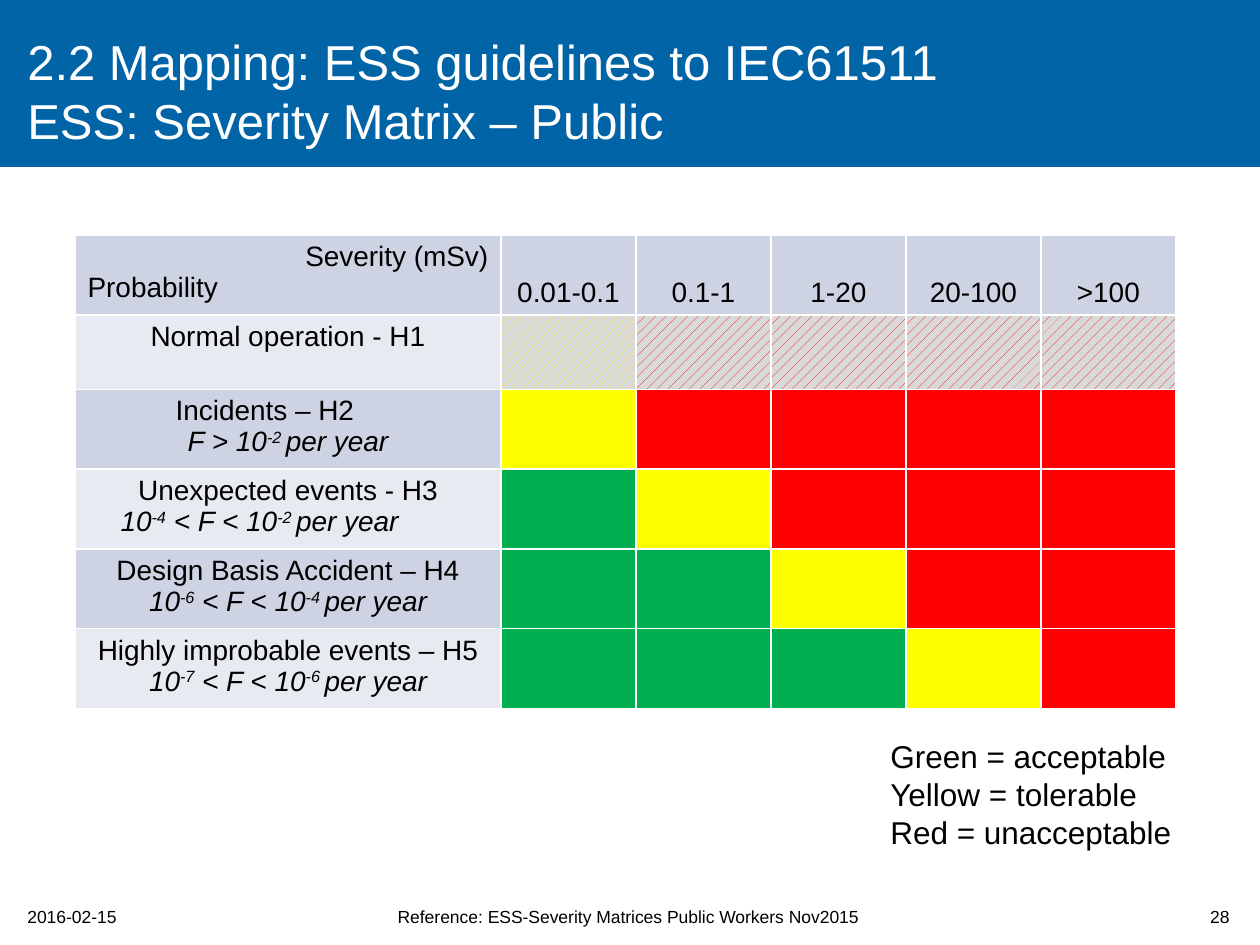
from lxml import etree
from pptx import Presentation
from pptx.dml.color import RGBColor as RGB
from pptx.enum.dml import MSO_PATTERN as Pat
from pptx.enum.shapes import MSO_SHAPE as Shape
from pptx.enum.text import MSO_ANCHOR as Anchor, PP_ALIGN as Align
from pptx.oxml.ns import qn
from pptx.util import Pt

PX = 914400 / 126
FONT = "Arial"
BLACK = RGB(0, 0, 0)
WHITE = RGB(255, 255, 255)
BLUE = RGB(0x00, 0x64, 0xA6)
DARK = RGB(0xCD, 0xD3, 0xE2)
LIGHT = RGB(0xE8, 0xEA, 0xF1)
GREY = RGB(0xD9, 0xD9, 0xD9)
GREEN = RGB(0x00, 0xB0, 0x50)
YELLOW = RGB(255, 255, 0)
RED = RGB(255, 0, 0)
TONES = {"G": GREEN, "Y": YELLOW, "R": RED}

BANDS = ["0.01-0.1", "0.1-1", "1-20", "20-100", ">100"]
# Event class, frequency as (text, raised) runs, ratings, left indents of both lines
EVENTS = [
    ("Normal operation - H1", [], "YRRRR", (0, 0)),
    ("Incidents – H2", [("F > 10", False), ("-2 ", True), ("per year", False)],
     "YRRRR", (88, 0)),
    ("Unexpected events - H3",
     [("10", False), ("-4", True), (" < F < 10", False), ("-2 ", True),
      ("per year", False)], "GYRRR", (0, 33)),
    ("Design Basis Accident – H4",
     [("10", False), ("-6", True), (" < F < 10", False), ("-4 ", True),
      ("per year", False)], "GGYRR", (0, 0)),
    ("Highly improbable events – H5",
     [("10", False), ("-7", True), (" < F < 10", False), ("-6 ", True),
      ("per year", False)], "GGGYR", (0, 0)),
]


def emu(*vals):
    return [round(v * PX) for v in vals]


def add_run(para, text, size, color=BLACK, italic=False, raised=False):
    run = para.add_run()
    run.text = text
    font = run.font
    font.name, font.size, font.italic = FONT, Pt(size), italic
    font.bold = False
    font.color.rgb = color
    if raised:
        run._r.get_or_add_rPr().set("baseline", "30000")


def add_text(slide, box, lines, size, color=BLACK, align=Align.LEFT,
             anchor=Anchor.TOP):
    frame = slide.shapes.add_textbox(*emu(*box)).text_frame
    frame.word_wrap = True
    frame.vertical_anchor = anchor
    for i, line in enumerate(lines):
        para = frame.add_paragraph() if i else frame.paragraphs[0]
        para.alignment = align
        add_run(para, line, size, color)


def add_header(slide, box):
    x, y, w, h = box
    bar = slide.shapes.add_shape(Shape.RECTANGLE, *emu(*box))
    bar.shadow.inherit = False
    bar.fill.solid()
    bar.fill.fore_color.rgb = BLUE
    bar.line.fill.background()
    add_text(slide, (x + 15, y + 26, 953, 129),
             ["2.2 Mapping: ESS guidelines to IEC61511",
              "ESS: Severity Matrix – Public"], 28, WHITE, anchor=Anchor.MIDDLE)


def paint(cell, color, hatch=False):
    """Fill a cell, plain or patterned, and rule it in white."""
    fill = cell.fill
    if hatch:
        fill.patterned()
        fill.pattern = Pat.PERCENT_20
        fill.fore_color.rgb, fill.back_color.rgb = color, GREY
    else:
        fill.solid()
        fill.fore_color.rgb = color
    props = cell._tc.get_or_add_tcPr()
    for i, side in enumerate(("a:lnL", "a:lnR", "a:lnT", "a:lnB")):
        line = etree.Element(qn(side), w=str(Pt(1)))
        solid = etree.SubElement(line, qn("a:solidFill"))
        etree.SubElement(solid, qn("a:srgbClr"), val=str(WHITE))
        props.insert(i, line)


def write(cell, i, runs, align=Align.CENTER, indent=0, italic=False):
    """Write line i of a cell; an indented line is set from the left."""
    frame = cell.text_frame
    para = frame.add_paragraph() if i else frame.paragraphs[0]
    para.alignment = Align.LEFT if indent else align
    if indent:
        para._p.get_or_add_pPr().set("marL", str(emu(indent)[0]))
    for text, raised in runs:
        add_run(para, text, 16, italic=italic, raised=raised)


def add_matrix(slide, box):
    x, y, w, h = box
    rows, cols = len(EVENTS) + 1, len(BANDS) + 1
    table = slide.shapes.add_table(rows, cols, *emu(*box)).table
    table.first_row = table.horz_banding = False
    step = 135
    for i, col in enumerate(table.columns):
        col.width = emu(step if i else w - step * len(BANDS))[0]
    for row in table.rows:
        row.height = emu(h / rows)[0]

    corner = table.cell(0, 0)
    paint(corner, DARK)
    write(corner, 0, [("Severity (mSv)", False)], Align.RIGHT)
    write(corner, 1, [("Probability", False)], Align.LEFT)
    for c, band in enumerate(BANDS, 1):
        cell = table.cell(0, c)
        paint(cell, DARK)
        cell.vertical_anchor = Anchor.BOTTOM
        write(cell, 0, [(band, False)])

    for r, (name, freq, marks, dents) in enumerate(EVENTS, 1):
        head = table.cell(r, 0)
        paint(head, LIGHT if r % 2 else DARK)
        write(head, 0, [(name, False)], indent=dents[0])
        if freq:
            write(head, 1, freq, indent=dents[1], italic=True)
        for c, mark in enumerate(marks, 1):
            paint(table.cell(r, c), TONES[mark], hatch=not freq)


def add_legend(slide, box):
    add_text(slide, box, ["Green = acceptable", "Yellow = tolerable",
                          "Red = unacceptable"], 18)


def add_footer(slide, box):
    x, y, w, h = box
    add_text(slide, (x + 15, y + 8, 208, 34), ["2016-02-15"], 10)
    add_text(slide, (x + 334, y + 8, 588, 34),
             ["Reference: ESS-Severity Matrices Public Workers Nov2015"], 10,
             align=Align.CENTER)
    add_text(slide, (x + w - 108, y, 90, h), ["28"], 10, align=Align.RIGHT,
             anchor=Anchor.MIDDLE)


def main():
    deck = Presentation()
    deck.slide_width, deck.slide_height = emu(1260, 945)
    slide = deck.slides.add_slide(deck.slide_layouts[6])
    add_header(slide, (0, 0, 1260, 167))
    add_matrix(slide, (75, 235, 1101, 447))
    add_legend(slide, (878, 731, 338, 127))
    add_footer(slide, (0, 892, 1260, 50))
    deck.save("out.pptx")


if __name__ == "__main__":
    main()
